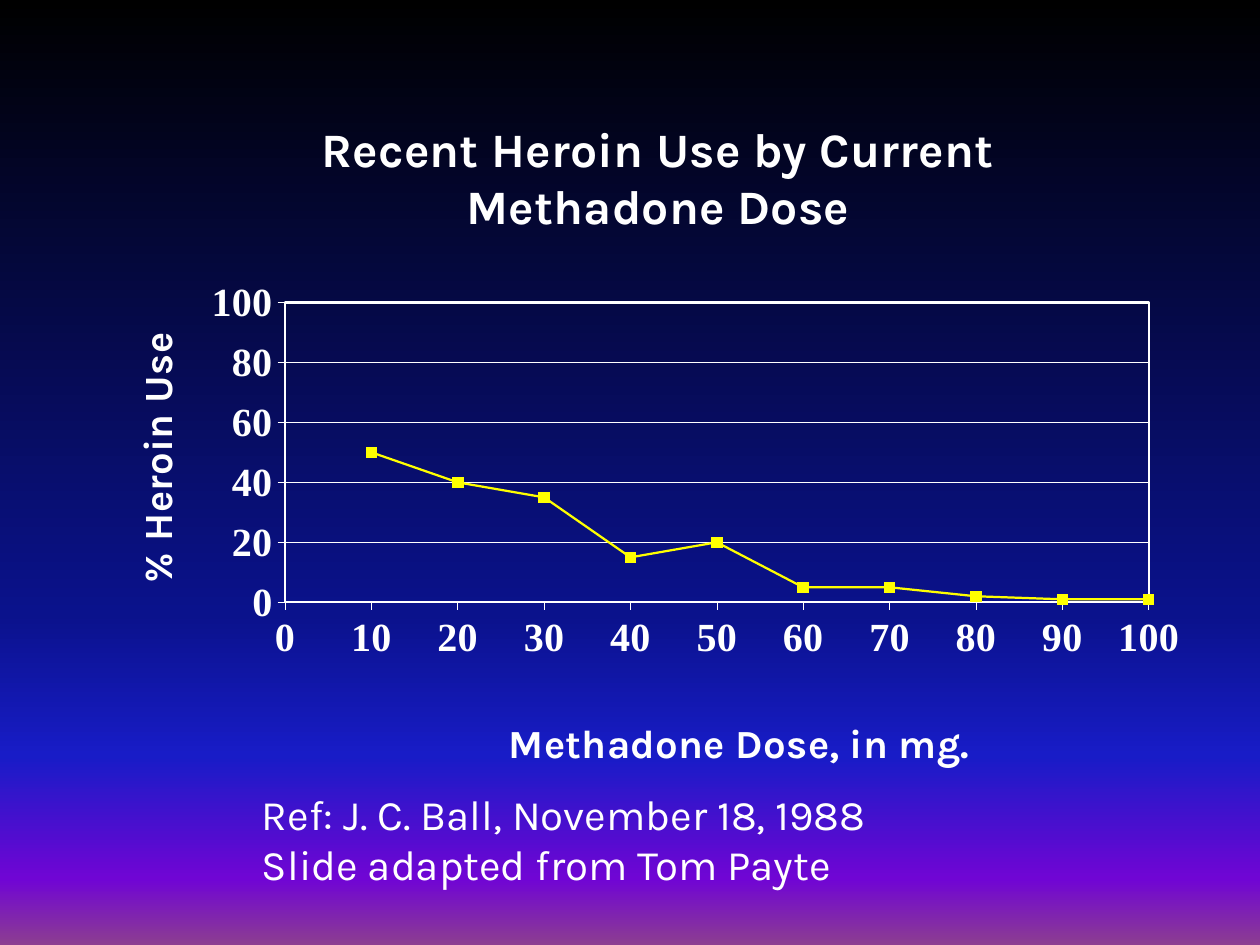
from lxml import etree
from pptx import Presentation
from pptx.chart.data import XyChartData
from pptx.dml.color import RGBColor
from pptx.enum.chart import XL_CHART_TYPE, XL_MARKER_STYLE, XL_TICK_MARK
from pptx.oxml import parse_xml
from pptx.oxml.ns import nsdecls, qn
from pptx.util import Cm, Pt

SMOOTH_SCATTER = XL_CHART_TYPE.XY_SCATTER_SMOOTH
SQUARE = XL_MARKER_STYLE.SQUARE
OUTSIDE, NO_TICK = XL_TICK_MARK.OUTSIDE, XL_TICK_MARK.NONE
WHITE = RGBColor(0xFF, 0xFF, 0xFF)
YELLOW = RGBColor(0xFF, 0xFF, 0x00)
HEADING_FONT, NUMBER_FONT = "Karla", "Times New Roman"

BACKGROUND = [
    (0, RGBColor(0x00, 0x00, 0x00)),
    (65, RGBColor(0x0A, 0x12, 0x8C)),
    (80, RGBColor(0x18, 0x1C, 0xC7)),
    (93, RGBColor(0x70, 0x05, 0xD4)),
    (100, RGBColor(0x8C, 0x3D, 0x91)),
]
HEADING = "Recent Heroin Use by Current Methadone Dose"
DOSE_TITLE = "Methadone Dose, in mg."
USE_TITLE = "% Heroin Use"
HEROIN_USE = [50, 40, 35, 15, 20, 5, 5, 2, 1, 1]
DOSE_STEP = 10
REFERENCE = ["Ref: J. C. Ball, November 18, 1988", "Slide adapted from Tom Payte"]


def paint_background(slide):
    fill = slide.background.fill
    fill.gradient()
    fill.gradient_angle = 270
    stops = slide._element.find(".//" + qn("a:gsLst"))
    for stop in list(stops):
        stops.remove(stop)
    for percent, color in BACKGROUND:
        stop = etree.SubElement(stops, qn("a:gs"), pos=str(percent * 1000))
        etree.SubElement(stop, qn("a:srgbClr"), val=str(color))


def place(element, index, **layout):
    for old in element.findall(qn("c:layout")):
        element.remove(old)
    entries = "".join(f'<c:{key} val="{value}"/>' for key, value in layout.items())
    element.insert(index, parse_xml(
        f'<c:layout {nsdecls("c")}><c:manualLayout>{entries}</c:manualLayout></c:layout>'))


def set_title(title, text, size, x, y):
    title.text_frame.text = text
    font = title.text_frame.paragraphs[0].runs[0].font
    font.name, font.size, font.bold = HEADING_FONT, Pt(size), True
    font.color.rgb = WHITE
    place(title._element, 1, xMode="edge", yMode="edge", x=x, y=y)


def set_line(line, color, width):
    line.color.rgb = color
    line.width = Pt(width)


def style_axis(axis, step):
    axis.minimum_scale, axis.maximum_scale, axis.major_unit = 0, 100, step
    axis.major_tick_mark, axis.minor_tick_mark = OUTSIDE, NO_TICK
    axis.tick_labels.number_format = "General"
    axis.tick_labels.number_format_is_linked = False
    set_line(axis.format.line, WHITE, 0.32)


def add_dose_chart(slide):
    data = XyChartData()
    points = data.add_series("Series 1")
    for position, use in enumerate(HEROIN_USE, 1):
        points.add_data_point(position * DOSE_STEP, use)
    chart = slide.shapes.add_chart(
        SMOOTH_SCATTER, Cm(1.83), Cm(1.63), Cm(22.38), Cm(14.12), data).chart
    chart.has_legend = False
    chart.font.name, chart.font.size, chart.font.bold = NUMBER_FONT, Pt(22.9), True
    chart.font.color.rgb = WHITE

    dose, use = chart.category_axis, chart.value_axis
    style_axis(dose, DOSE_STEP)
    style_axis(use, 20)
    dose.has_major_gridlines = False
    use.has_major_gridlines = True
    set_line(use.major_gridlines.format.line, WHITE, 0.32)
    chart.has_title = True
    set_title(chart.chart_title, HEADING, 27.5, 0.2, 0.04)
    set_title(dose.axis_title, DOSE_TITLE, 22.9, 0.37, 0.9)
    set_title(use.axis_title, USE_TITLE, 22.9, 0.03, 0.35)
    turned = use.axis_title.text_frame._txBody.bodyPr
    turned.set("rot", "-5400000")
    turned.set("vert", "horz")

    plot_area = chart._chartSpace.chart.plotArea
    place(plot_area, 0, layoutTarget="inner", xMode="edge", yMode="edge",
          x=0.175, y=0.317, w=0.778, h=0.429)
    plot_area.append(parse_xml(
        f'<c:spPr {nsdecls("c", "a")}><a:noFill/><a:ln w="{Pt(1.27)}"><a:solidFill>'
        f'<a:srgbClr val="{WHITE}"/></a:solidFill></a:ln></c:spPr>'))

    curve = chart.plots[0].series[0]
    chart.plots[0].vary_by_categories = False
    curve.smooth = True if hasattr(curve, "smooth") else None
    set_line(curve.format.line, YELLOW, 1.27)
    curve.marker.style, curve.marker.size = SQUARE, 6
    curve.marker.format.fill.solid()
    curve.marker.format.fill.fore_color.rgb = YELLOW
    set_line(curve.marker.format.line, YELLOW, 0.5)


def add_reference(slide):
    frame = slide.shapes.add_textbox(Cm(5.03), Cm(15.77), Cm(13.54), Cm(2.31)).text_frame
    frame.word_wrap = False
    frame.text = "\n".join(REFERENCE)
    for paragraph in frame.paragraphs:
        font = paragraph.runs[0].font
        font.name, font.size = HEADING_FONT, Pt(24)
        font.color.rgb = WHITE


def main():
    deck = Presentation()
    deck.slide_width, deck.slide_height = Cm(25.4), Cm(19.05)
    slide = deck.slides.add_slide(deck.slide_layouts[6])
    paint_background(slide)
    add_dose_chart(slide)
    add_reference(slide)
    deck.save("out.pptx")


if __name__ == "__main__":
    main()
